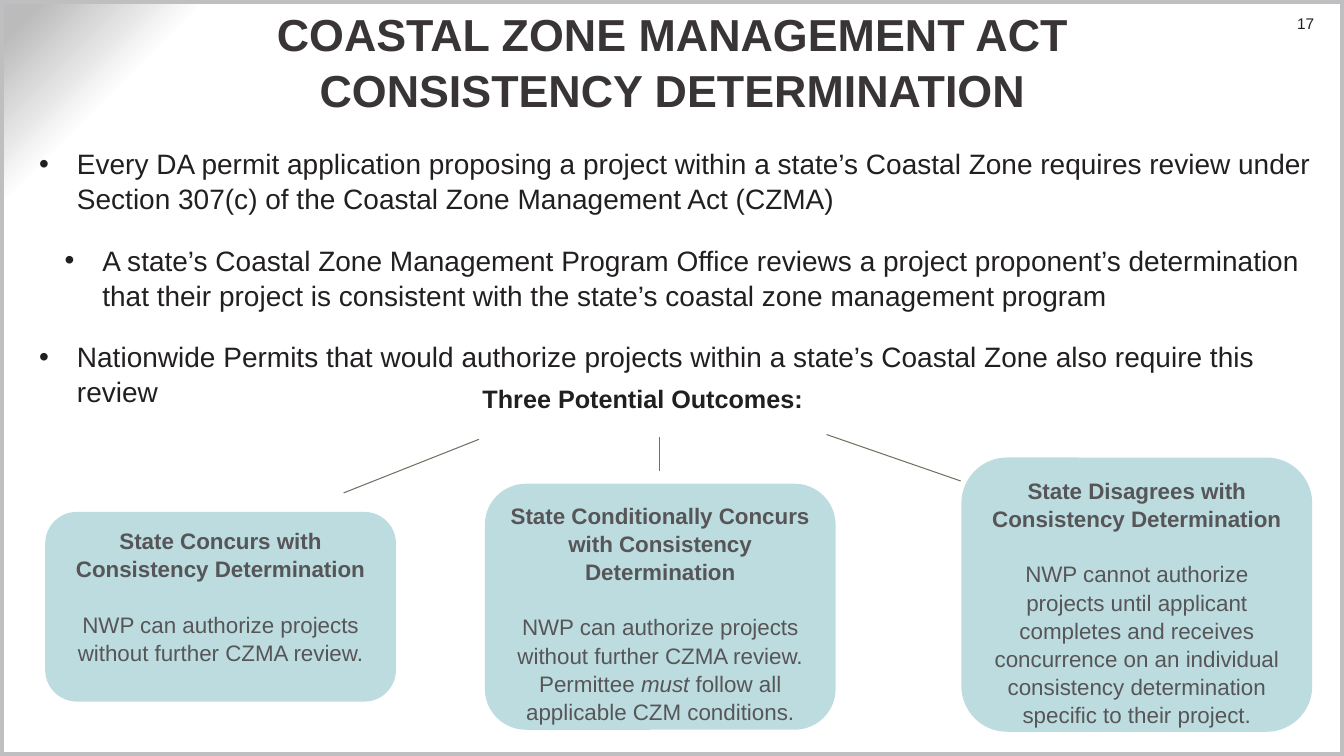
from dataclasses import dataclass

from lxml.etree import SubElement
from pptx import Presentation
from pptx.dml.color import RGBColor
from pptx.enum.shapes import MSO_CONNECTOR, MSO_SHAPE
from pptx.enum.text import MSO_ANCHOR, PP_ALIGN
from pptx.oxml import parse_xml
from pptx.oxml.ns import nsdecls, qn
from pptx.util import Cm, Pt


@dataclass(frozen=True)
class Theme:
    font: str = "Arial"
    title: str = "393436"
    body: str = "221F20"
    outcome: str = "565557"
    card: str = "B5D8DD"
    branch: str = "707162"
    frame: str = "BFBFC2"
    white: str = "FFFFFF"
    corner: str = "BBBBBC"
    title_size: int = 32
    body_size: int = 20
    heading_size: int = 18
    outcome_size: int = 16
    number_size: int = 11
    spacing: float = 1.05


THEME = Theme()
WIDTH, HEIGHT = 33.87, 19.05
CARD_WIDTH = 8.84

BULLETS = [
    (0.95, "Every DA permit application proposing a project within a state’s Coastal Zone "
           "requires review under Section 307(c) of the Coastal Zone Management Act (CZMA)"),
    (1.59, "A state’s Coastal Zone Management Program Office reviews a project proponent’s "
           "determination that their project is consistent with the state’s coastal zone "
           "management program"),
    (0.95, "Nationwide Permits that would authorize projects within a state’s Coastal Zone "
           "also require this review"),
]

OUTCOMES = [
    (1.14, 12.9, 4.78, "State Concurs with Consistency Determination",
     [("NWP can authorize projects without further CZMA review.", {})]),
    (12.22, 12.19, 6.2, "State Conditionally Concurs with Consistency Determination",
     [("NWP can authorize projects without further CZMA review. Permittee ", {}),
      ("must ", {"italic": True}),
      ("follow all applicable CZM conditions.", {})]),
    (24.23, 11.53, 6.91, "State Disagrees with Consistency Determination",
     [("NWP cannot authorize projects until applicant completes and receives concurrence "
       "on an individual consistency determination specific to their project.", {})]),
]

BRANCHES = [
    (12.07, 11.07, 8.66, 12.42),
    (16.61, 11.02, 16.61, 11.86),
    (20.83, 10.95, 24.21, 12.12),
]


def apply(obj, formats):
    for name, value in formats.items():
        setattr(obj, name, value)


def rgb(color):
    return RGBColor.from_string(color)


def add_run(p, text, size, color, **formats):
    r = p.add_run()
    r.text = text
    apply(r.font, {"name": THEME.font, "size": Pt(size), **formats})
    r.font.color.rgb = rgb(color)


def add_text(s, box, text, size, color, align=PP_ALIGN.LEFT, frame=None, **formats):
    tf = s.shapes.add_textbox(*map(Cm, box)).text_frame
    apply(tf, {"word_wrap": True, **(frame or {})})
    p = tf.paragraphs[0]
    p.alignment = align
    add_run(p, text, size, color, **formats)
    return p


def add_background(s):
    stops = "".join(
        f'<a:gs pos="{pos}000"><a:srgbClr val="{color}"/></a:gs>'
        for pos, color in [(87, THEME.white), (90, THEME.white), (98, THEME.corner)])
    s.element.cSld.insert(0, parse_xml(
        f'<p:bg {nsdecls("p", "a")}><p:bgPr><a:gradFill rotWithShape="1">'
        f'<a:gsLst>{stops}</a:gsLst><a:path path="circle">'
        '<a:fillToRect l="100000" t="100000"/></a:path></a:gradFill>'
        '<a:effectLst/></p:bgPr></p:bg>'))


def add_frame(s):
    sp = s.shapes.add_shape(MSO_SHAPE.RECTANGLE, 0, 0, Cm(WIDTH), Cm(HEIGHT))
    sp.shadow.inherit = False
    sp.fill.background()
    sp.line.color.rgb = rgb(THEME.frame)
    sp.line.width = Pt(6)


def add_bullets(s, box, bullets):
    tf = s.shapes.add_textbox(*map(Cm, box)).text_frame
    tf.word_wrap = True
    for i, (indent, text) in enumerate(bullets):
        p = tf.add_paragraph() if i else tf.paragraphs[0]
        pPr = p._p.get_or_add_pPr()
        pPr.set("marL", str(Cm(indent)))
        pPr.set("indent", str(-Cm(0.95)))
        SubElement(pPr, qn("a:buFont")).set("typeface", THEME.font)
        SubElement(pPr, qn("a:buChar")).set("char", "•")
        apply(p, {"line_spacing": THEME.spacing, "space_before": Pt(18.5 if i else 0)})
        add_run(p, text, THEME.body_size, THEME.body)


def add_outcome(s, left, top, height, heading, runs):
    sp = s.shapes.add_shape(MSO_SHAPE.ROUNDED_RECTANGLE,
                            Cm(left), Cm(top), Cm(CARD_WIDTH), Cm(height))
    sp.shadow.inherit = False
    sp.line.fill.background()
    sp.fill.solid()
    sp.fill.fore_color.rgb = rgb(THEME.card)
    SubElement(sp._element.spPr.find(".//" + qn("a:srgbClr")), qn("a:alpha")).set("val", "89000")
    tf = sp.text_frame
    apply(tf, {"word_wrap": True, "vertical_anchor": MSO_ANCHOR.TOP})
    paragraphs = [(0, [(heading, {"bold": True})]), (19.3, runs)]
    for i, (space, parts) in enumerate(paragraphs):
        p = tf.add_paragraph() if i else tf.paragraphs[0]
        apply(p, {"alignment": PP_ALIGN.CENTER, "line_spacing": THEME.spacing,
                  "space_before": Pt(space)})
        for text, formats in parts:
            add_run(p, text, THEME.outcome_size, THEME.outcome, **formats)


def add_branch(s, *ends):
    line = s.shapes.add_connector(MSO_CONNECTOR.STRAIGHT, *map(Cm, ends))
    line.line.color.rgb = rgb(THEME.branch)
    line.line.width = Pt(0.75)
    SubElement(line._element.spPr, qn("a:effectLst"))


def main():
    prs = Presentation()
    apply(prs, {"slide_width": Cm(WIDTH), "slide_height": Cm(HEIGHT)})
    s = prs.slides.add_slide(prs.slide_layouts[6])
    add_background(s)
    add_text(s, (31.6, 0.36, 1.52, 0.48), "17", THEME.number_size, THEME.body,
             PP_ALIGN.RIGHT, {"margin_top": 0, "margin_right": 0, "margin_bottom": 0})
    add_frame(s)
    title = add_text(s, (2.74, 0.36, 28.42, 2.31),
                     "COASTAL ZONE MANAGEMENT ACT CONSISTENCY DETERMINATION",
                     THEME.title_size, THEME.title, PP_ALIGN.CENTER,
                     {"vertical_anchor": MSO_ANCHOR.MIDDLE, "margin_top": 0, "margin_bottom": 0,
                      "margin_left": Cm(0.13), "margin_right": Cm(0.13)}, bold=True)
    title.line_spacing = THEME.spacing
    add_bullets(s, (0.74, 3.53, 32.79, 14.88), BULLETS)
    add_text(s, (11.91, 9.53, 10.01, 1.02), "Three Potential Outcomes:",
             THEME.heading_size, THEME.body, bold=True)
    for outcome in OUTCOMES:
        add_outcome(s, *outcome)
    for branch in BRANCHES:
        add_branch(s, *branch)
    prs.save("out.pptx")


if __name__ == "__main__":
    main()
